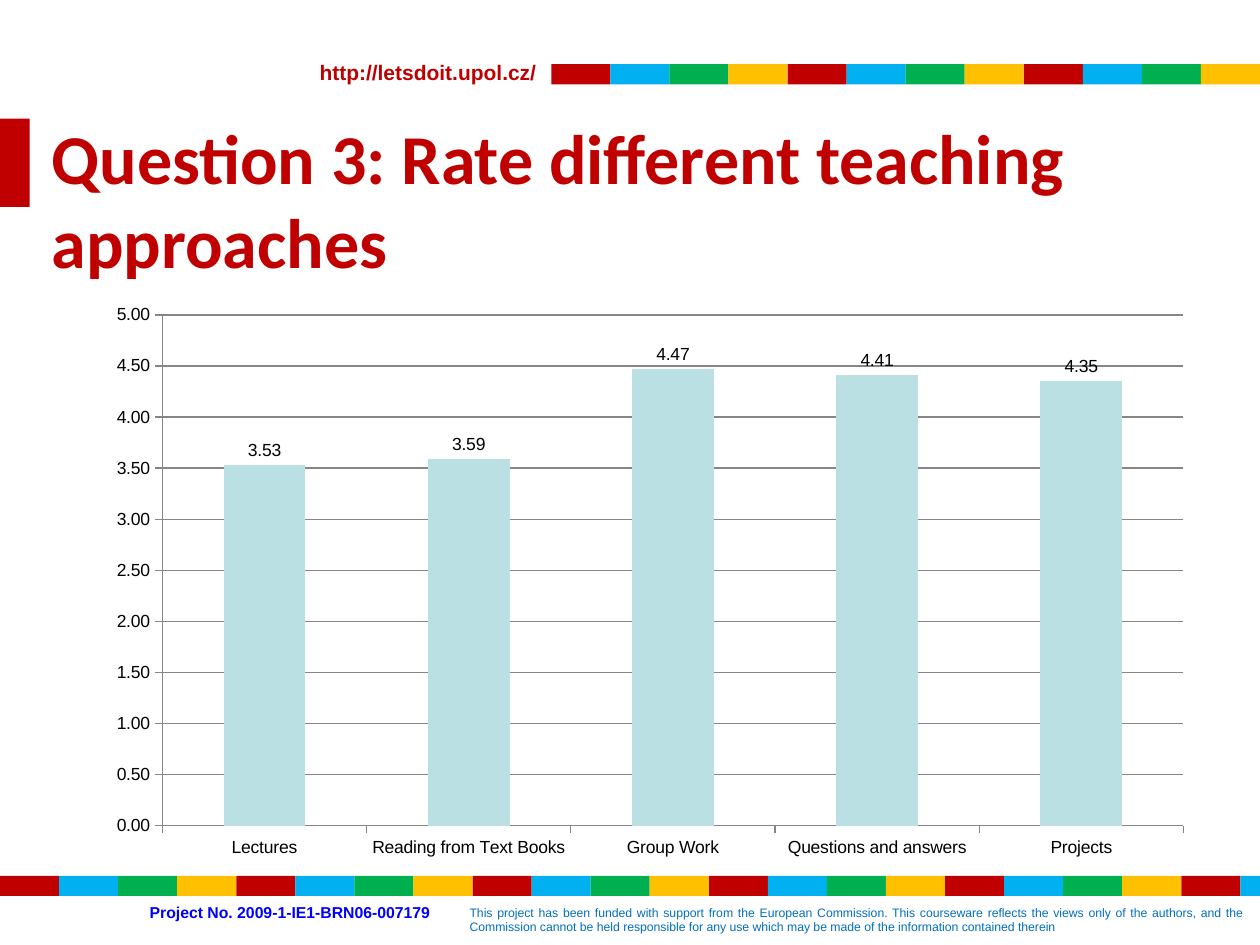
from math import ceil

from pptx import Presentation
from pptx.chart.data import CategoryChartData
from pptx.dml.color import RGBColor
from pptx.enum.chart import XL_CHART_TYPE, XL_LABEL_POSITION, XL_TICK_MARK
from pptx.enum.shapes import MSO_SHAPE
from pptx.enum.text import MSO_ANCHOR, PP_ALIGN
from pptx.util import Pt

THEME = {
    "red": "C00000", "sky": "00B0F0", "green": "00B050", "amber": "FFC000",
    "link": "0000FF", "note": "0070C0", "bar": "BBE0E3",
    "text": "000000", "line": "868686",
    "body_font": "Arial", "title_font": "Calibri",
    "title_size": 40, "address_size": 12, "chart_size": 10,
    "project_size": 9, "note_size": 7,
}
PAGE_WIDTH, PAGE_HEIGHT = 720, 540
TILE_WIDTH, TILE_HEIGHT = 33.75, 11.5
TILE_COLORS = ("red", "sky", "green", "amber")
STRIPS = [(315, 36.75), (0, 500.5)]
TITLE_TAB = (0, 67.75, 17, 50.5)

TEXTS = [
    ("http://letsdoit.upol.cz/", (175.5, 30.5, 140.5, 22),
     "address_size", "body_font", "red", True, PP_ALIGN.LEFT),
    ("This project has been funded with support from the European Commission. "
     "This courseware reflects the views only of the authors, and the Commission "
     "cannot be held responsible for any use which may be made of the information "
     "contained therein", (261.25, 513.5, 456, 24.5),
     "note_size", "body_font", "note", False, PP_ALIGN.JUSTIFY),
    ("Project No. 2009-1-IE1-BRN06-007179", (78.5, 512.5, 191.5, 18),
     "project_size", "body_font", "link", True, PP_ALIGN.LEFT),
    ("Question 3: Rate different teaching approaches", (22.5, 62, 661.5, 73.5),
     "title_size", "title_font", "red", True, PP_ALIGN.LEFT),
]

RATINGS = {
    "Lectures": 3.53,
    "Reading from Text Books": 3.59,
    "Group Work": 4.47,
    "Questions and answers": 4.41,
    "Projects": 4.35,
}
CHART_AREA = (54, 167.75, 635, 329)


def color(name):
    return RGBColor.from_string(THEME[name])


def lengths(area):
    return [Pt(value) for value in area]


def add_block(page, area, fill):
    block = page.shapes.add_shape(MSO_SHAPE.RECTANGLE, *lengths(area))
    block.shadow.inherit = False
    block.fill.solid()
    block.fill.fore_color.rgb = color(fill)
    block.line.fill.background()


def add_strip(page, left, top):
    for index in range(ceil((PAGE_WIDTH - left) / TILE_WIDTH)):
        start = left + index * TILE_WIDTH
        width = min(TILE_WIDTH, PAGE_WIDTH - start)
        fill = TILE_COLORS[index % len(TILE_COLORS)]
        add_block(page, (start, top, width, TILE_HEIGHT), fill)


def add_text(page, text, area, size, font, fill, bold, align):
    frame = page.shapes.add_textbox(*lengths(area)).text_frame
    frame.word_wrap = True
    frame.vertical_anchor = MSO_ANCHOR.TOP
    frame.text = text
    para = frame.paragraphs[0]
    para.alignment = align
    span = para.runs[0]
    span.font.name = THEME[font]
    span.font.size = Pt(THEME[size])
    span.font.bold = bold
    span.font.color.rgb = color(fill)


def add_ratings_chart(page):
    data = CategoryChartData(number_format="0.00")
    data.categories = list(RATINGS)
    data.add_series("Series 1", list(RATINGS.values()))
    chart = page.shapes.add_chart(
        XL_CHART_TYPE.COLUMN_CLUSTERED, *lengths(CHART_AREA), data).chart
    chart.has_legend = False
    chart.has_title = False
    chart.font.name = THEME["body_font"]
    chart.font.size = Pt(THEME["chart_size"])
    chart.font.color.rgb = color("text")

    scale = chart.value_axis
    scale.minimum_scale, scale.maximum_scale, scale.major_unit = 0, 5, 0.5
    scale.has_major_gridlines = True
    scale.tick_labels.number_format = "0.00"
    scale.tick_labels.number_format_is_linked = False
    for axis in (scale, chart.category_axis):
        axis.major_tick_mark = XL_TICK_MARK.OUTSIDE
        axis.minor_tick_mark = XL_TICK_MARK.NONE
    for part in (scale, chart.category_axis, scale.major_gridlines):
        part.format.line.color.rgb = color("line")
        part.format.line.width = Pt(0.75)

    plot = chart.plots[0]
    plot.gap_width = 150
    plot.vary_by_categories = False
    bars = plot.series[0]
    bars.format.fill.solid()
    bars.format.fill.fore_color.rgb = color("bar")
    labels = bars.data_labels
    labels.show_value = True
    labels.number_format = "0.00"
    labels.number_format_is_linked = False
    labels.position = XL_LABEL_POSITION.OUTSIDE_END


def main():
    deck = Presentation()
    deck.slide_width, deck.slide_height = Pt(PAGE_WIDTH), Pt(PAGE_HEIGHT)
    page = deck.slides.add_slide(deck.slide_layouts[6])
    for left, top in STRIPS:
        add_strip(page, left, top)
    add_block(page, TITLE_TAB, "red")
    for entry in TEXTS:
        add_text(page, *entry)
    add_ratings_chart(page)
    deck.save("out.pptx")


if __name__ == "__main__":
    main()
